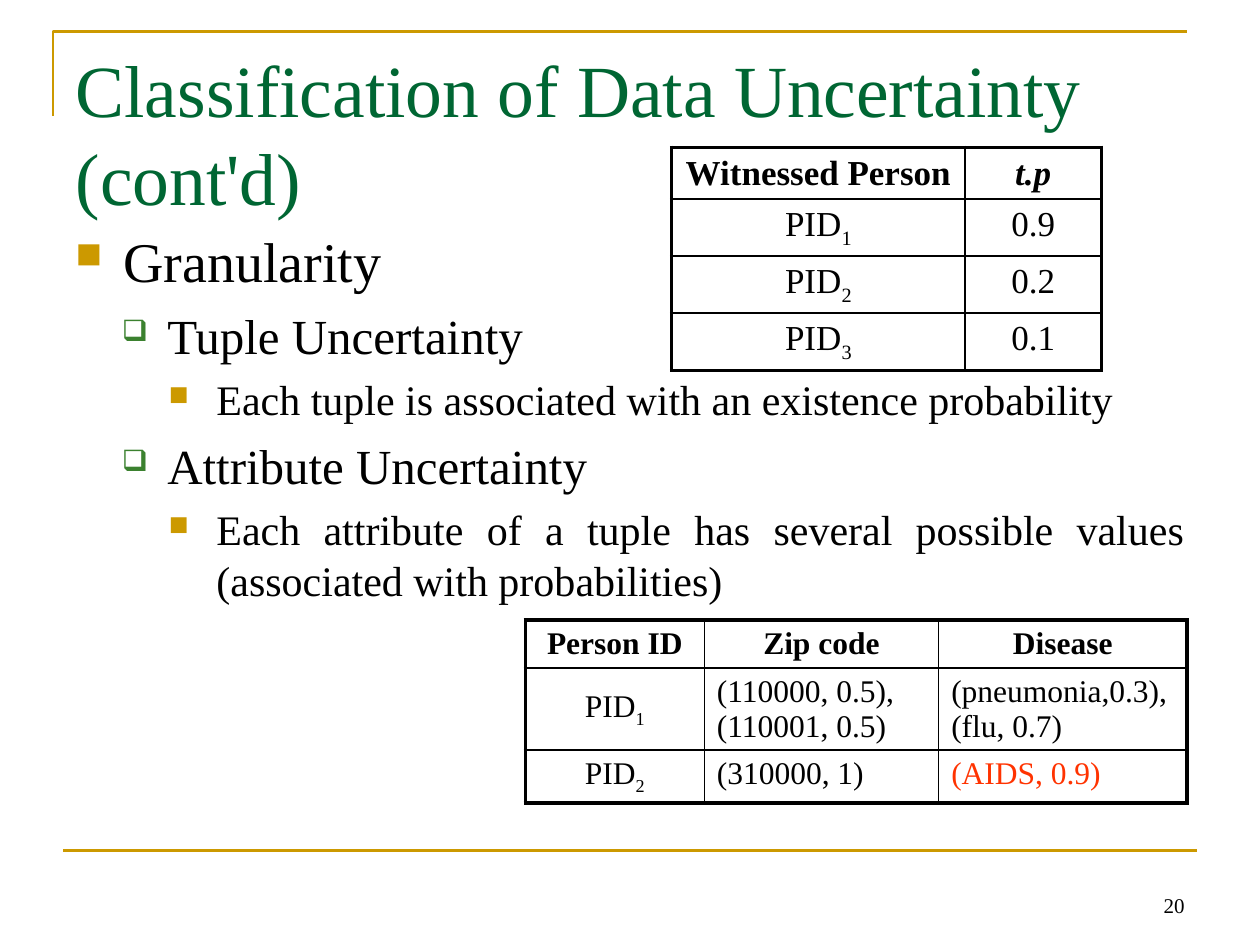
from dataclasses import dataclass

from lxml import etree
from pptx import Presentation
from pptx.dml.color import RGBColor
from pptx.enum.shapes import MSO_CONNECTOR
from pptx.enum.text import MSO_ANCHOR, MSO_AUTO_SIZE, PP_ALIGN
from pptx.oxml.ns import qn
from pptx.util import Inches, Pt

LEFT, CENTER, RIGHT, JUSTIFY = (PP_ALIGN.LEFT, PP_ALIGN.CENTER,
                                PP_ALIGN.RIGHT, PP_ALIGN.JUSTIFY)
TOP, MIDDLE, BOTTOM = MSO_ANCHOR.TOP, MSO_ANCHOR.MIDDLE, MSO_ANCHOR.BOTTOM
STRAIGHT = MSO_CONNECTOR.STRAIGHT
TITLE_ONLY = 5


@dataclass(frozen=True)
class Theme:
    font: str = "Times New Roman"
    text: str = "000000"
    title: str = "006633"
    gold: str = "CC9900"
    green: str = "3B812F"
    alert: str = "FF3300"
    title_size: int = 42
    body_sizes: tuple = (32, 28, 24)
    number_size: int = 12
    rule: float = 1.5
    thin: float = 1
    thick: float = 2.25
    space_before: float = 0.23


THEME = Theme()
MARGIN, CONTENT_WIDTH = 0.5, 9

# Per level: left indent, hanging indent, bullet, colour, bullet size in %
LEVELS = (
    (0.38, 0.38, "■", THEME.gold, 65),
    (0.73, 0.36, "❑", THEME.green, 60),
    (1.12, 0.38, "■", THEME.gold, 65),
)
OUTLINE = (
    (0, "Granularity"),
    (1, "Tuple Uncertainty"),
    (2, "Each tuple is associated with an existence probability"),
    (1, "Attribute Uncertainty"),
    (2, "Each attribute of a tuple has several possible values "
        "(associated with probabilities)"),
)
# "_" starts a subscript
TUPLE_ROWS = (
    ("Witnessed Person", "t.p"),
    ("PID_1", "0.9"),
    ("PID_2", "0.2"),
    ("PID_3", "0.1"),
)
ATTRIBUTE_ROWS = (
    ("Person ID", "Zip code", "Disease"),
    ("PID_1", "(110000, 0.5), (110001, 0.5)", "(pneumonia,0.3), (flu, 0.7)"),
    ("PID_2", "(310000, 1)", "(AIDS, 0.9)"),
)


def rgb(color):
    return RGBColor.from_string(color)


def add_xml(parent, tag, **attributes):
    child = etree.SubElement(parent, qn(tag))
    for name, value in attributes.items():
        child.set(name, str(value))
    return child


def format_runs(p, size, color=THEME.text, bold=False):
    for r in p.runs:
        r.font.name = THEME.font
        r.font.size = Pt(size)
        r.font.color.rgb = rgb(color)
        r.font.bold = bold


def prepare_frame(tf, anchor=TOP):
    tf.word_wrap = True
    tf.auto_size = MSO_AUTO_SIZE.NONE
    tf.vertical_anchor = anchor


def add_text_box(s, left, top, width, height, anchor=TOP):
    sp = s.shapes.add_textbox(*map(Inches, (left, top, width, height)))
    prepare_frame(sp.text_frame, anchor)
    return sp.text_frame


def style_line(line):
    line.color.rgb = rgb(THEME.gold)
    line.width = Pt(THEME.rule)


def add_rules(s):
    builder = s.shapes.build_freeform(Inches(0.42), Inches(0.92))
    builder.add_line_segments([(Inches(0.42), Inches(0.25)),
                               (Inches(9.42), Inches(0.25))], close=False)
    corner = builder.convert_to_shape()
    corner.shadow.inherit = False
    corner.fill.background()
    style_line(corner.line)

    y = Inches(6.75)
    footer = s.shapes.add_connector(
        STRAIGHT, Inches(MARGIN), y, Inches(MARGIN + CONTENT_WIDTH), y)
    style_line(footer.line)
    add_xml(footer._element.spPr, "a:effectLst")


def add_title(s, text):
    sp = s.shapes.title
    sp.left, sp.top, sp.width, sp.height = map(
        Inches, (MARGIN, 0.3, CONTENT_WIDTH, 1.25))
    sp.text_frame.text = text
    prepare_frame(sp.text_frame)
    p = sp.text_frame.paragraphs[0]
    p.alignment = LEFT
    format_runs(p, THEME.title_size, THEME.title)


def add_bullet(p, level):
    indent, hanging, char, color, percent = LEVELS[level]
    pPr = p._p.get_or_add_pPr()
    pPr.set("marL", str(Inches(indent)))
    pPr.set("indent", str(-Inches(hanging)))
    add_xml(add_xml(pPr, "a:buClr"), "a:srgbClr", val=color)
    add_xml(pPr, "a:buSzPct", val=percent * 1000)
    add_xml(pPr, "a:buChar", char=char)


def add_outline(s):
    tf = add_text_box(s, MARGIN, 1.75, CONTENT_WIDTH, 4.95)
    for i, (level, text) in enumerate(OUTLINE):
        p = tf.add_paragraph() if i else tf.paragraphs[0]
        size = THEME.body_sizes[level]
        p.text = text
        p.level = level
        p.alignment = JUSTIFY
        p.space_before = Pt(round(size * THEME.space_before, 1))
        add_bullet(p, level)
        format_runs(p, size)


def set_borders(cell, **widths):
    tcPr = cell._tc.get_or_add_tcPr()
    for i, side in enumerate(("lnL", "lnR", "lnT", "lnB")):
        line = etree.Element(qn(f"a:{side}"), w=str(Pt(widths[side])))
        add_xml(add_xml(line, "a:solidFill"), "a:srgbClr", val=THEME.text)
        tcPr.insert(i, line)


def fill_cell(cell, text, size, align, bold):
    base, _, subscript = text.partition("_")
    cell.text = base
    p = cell.text_frame.paragraphs[0]
    p.alignment = align
    if subscript:
        r = p.add_run()
        r.text = subscript
        r.font._element.set("baseline", "-25000")
    format_runs(p, size, bold=bold)
    cell.fill.background()


def add_grid(s, left, top, widths, heights, rows, size, centered):
    """Add a table with thick outer borders; centered holds column numbers."""
    table = s.shapes.add_table(
        len(rows), len(widths), Inches(left), Inches(top),
        Inches(sum(widths)), Inches(sum(heights))).table
    table.horz_banding = False
    for column, width in zip(table.columns, widths):
        column.width = Inches(width)
    last_row, last_column = len(rows) - 1, len(widths) - 1
    for i, values in enumerate(rows):
        table.rows[i].height = Inches(heights[i])
        for j, text in enumerate(values):
            align = CENTER if i == 0 or j in centered else LEFT
            cell = table.cell(i, j)
            fill_cell(cell, text, size, align, bold=i == 0)
            edges = {"lnL": j == 0, "lnR": j == last_column,
                     "lnT": i == 0, "lnB": i == last_row}
            set_borders(cell, **{side: THEME.thick if outer else THEME.thin
                                 for side, outer in edges.items()})
    return table


def add_slide_number(s, number):
    tf = add_text_box(s, 7.17, 6.83, 2.33, 0.5, BOTTOM)
    tf.text = number
    p = tf.paragraphs[0]
    p.alignment = RIGHT
    format_runs(p, THEME.number_size)


def main():
    prs = Presentation()
    prs.slide_width, prs.slide_height = Inches(10), Inches(7.5)
    s = prs.slides.add_slide(prs.slide_layouts[TITLE_ONLY])
    add_rules(s)
    add_slide_number(s, "20")
    add_title(s, "Classification of Data Uncertainty (cont'd)")
    add_outline(s)

    tuples = add_grid(s, 5.33, 1.17, (2.33, 1.08), (0.41, 0.45, 0.45, 0.45),
                      TUPLE_ROWS, 20, centered=(0, 1))
    tuples.cell(0, 1).text_frame.paragraphs[0].runs[0].font.italic = True

    attributes = add_grid(s, 4.17, 4.92, (1.42, 1.86, 1.97),
                          (0.38, 0.65, 0.42), ATTRIBUTE_ROWS, 18, centered=(0,))
    attributes.cell(1, 0).vertical_anchor = MIDDLE
    disease = attributes.cell(2, 2).text_frame.paragraphs[0].runs[0]
    disease.font.color.rgb = rgb(THEME.alert)

    prs.save("out.pptx")


if __name__ == "__main__":
    main()
